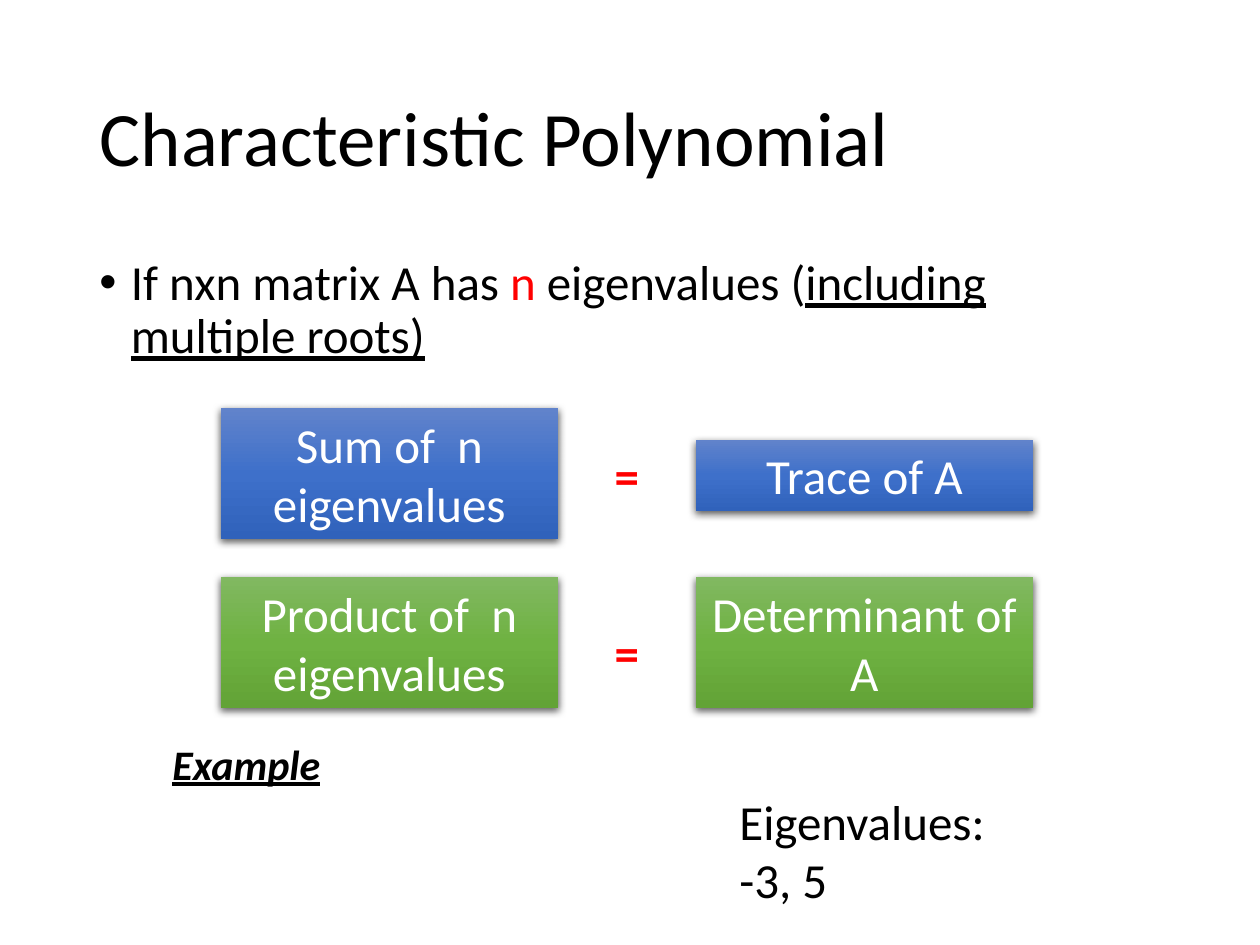
from copy import deepcopy

from lxml.etree import SubElement
from pptx import Presentation
from pptx.dml.color import RGBColor
from pptx.enum.shapes import MSO_SHAPE
from pptx.enum.text import MSO_ANCHOR, PP_ALIGN
from pptx.oxml.ns import qn
from pptx.util import Inches, Pt

BLACK = RGBColor(0, 0, 0)
WHITE = RGBColor(255, 255, 255)
RED = RGBColor(255, 0, 0)
BLUES = [RGBColor(0x61, 0x83, 0xCB), RGBColor(0x3E, 0x70, 0xCA), RGBColor(0x30, 0x62, 0xBB)]
GREENS = [RGBColor(0x81, 0xB8, 0x61), RGBColor(0x6F, 0xB2, 0x42), RGBColor(0x62, 0xA3, 0x36)]


def add_run(para, text, size=28, color=BLACK, bold=None, italic=None, underline=None):
    span = para.add_run()
    span.text = text
    font = span.font
    font.name, font.size, font.color.rgb = "Calibri", Pt(size), color
    font.bold, font.italic, font.underline = bold, italic, underline


def add_text_box(left, top, width, height):
    box = page.shapes.add_textbox(Inches(left), Inches(top), Inches(width), Inches(height))
    box.text_frame.word_wrap = True
    return box.text_frame


deck = Presentation()
deck.slide_width, deck.slide_height = Inches(10), Inches(7.5)
page = deck.slides.add_slide(deck.slide_layouts[5])

# Title
title = page.shapes.title
title.left, title.top = Inches(0.69), Inches(0.4)
title.width, title.height = Inches(8.62), Inches(1.45)
title.text_frame.vertical_anchor = MSO_ANCHOR.MIDDLE
para = title.text_frame.paragraphs[0]
para.alignment = PP_ALIGN.LEFT
para.line_spacing = 0.9
add_run(para, "Characteristic Polynomial", 44)

# Bulleted statement
para = add_text_box(0.69, 2, 8.62, 1.1).paragraphs[0]
para.line_spacing = 0.9
para.space_before = Pt(10)
properties = para._p.get_or_add_pPr()
properties.set("marL", str(Inches(0.25)))
properties.set("indent", str(-Inches(0.25)))
SubElement(properties, qn("a:buFont"), typeface="Arial")
SubElement(properties, qn("a:buChar"), char="•")
add_run(para, "If nxn matrix A has ")
add_run(para, "n", color=RED)
add_run(para, " eigenvalues (")
add_run(para, "including multiple roots)", underline=True)

# Boxes on both sides of the two equations
for left, top, height, colors, text in [
    (1.75, 3.24, 1.04, BLUES, "Sum of  n eigenvalues"),
    (1.75, 4.58, 1.04, GREENS, "Product of  n eigenvalues"),
    (5.52, 3.49, 0.57, BLUES, "Trace of A"),
    (5.52, 4.58, 1.04, GREENS, "Determinant of A"),
]:
    box = page.shapes.add_shape(
        MSO_SHAPE.RECTANGLE, Inches(left), Inches(top), Inches(2.68), Inches(height))
    box.line.fill.background()

    # Three-stop gradient from top to bottom
    box.fill.gradient()
    box.fill.gradient_angle = 270
    stop_list = box._element.spPr.find(".//" + qn("a:gsLst"))
    stop_list.insert(1, deepcopy(stop_list[0]))
    for stop, position, color in zip(box.fill.gradient_stops, (0, 0.5, 1), colors):
        stop.position = position
        stop.color.rgb = color

    # Soft shadow below
    box.shadow.inherit = False
    effects = box._element.spPr.find(qn("a:effectLst"))
    shadow = SubElement(effects, qn("a:outerShdw"), blurRad=str(Pt(4.5)), dist=str(Pt(1.5)),
                        dir="5400000", algn="ctr", rotWithShape="0")
    shadow_color = SubElement(shadow, qn("a:srgbClr"), val="000000")
    SubElement(shadow_color, qn("a:alpha"), val="63000")

    box.text_frame.word_wrap = True
    box.text_frame.vertical_anchor = MSO_ANCHOR.TOP
    para = box.text_frame.paragraphs[0]
    para.alignment = PP_ALIGN.CENTER
    add_run(para, text, color=WHITE)

# Equals signs
for top in (3.49, 4.89):
    para = add_text_box(4.6, top, 0.75, 0.57).paragraphs[0]
    para.alignment = PP_ALIGN.CENTER
    add_run(para, "=", color=RED, bold=True)

# Example
frame = add_text_box(5.77, 6.23, 2.86, 1.04)
add_run(frame.paragraphs[0], "Eigenvalues:")
add_run(frame.add_paragraph(), "-3, 5")
frame = add_text_box(1.27, 5.81, 1.82, 0.5)
add_run(frame.paragraphs[0], "Example", 24, bold=True, italic=True, underline=True)

deck.save("out.pptx")
